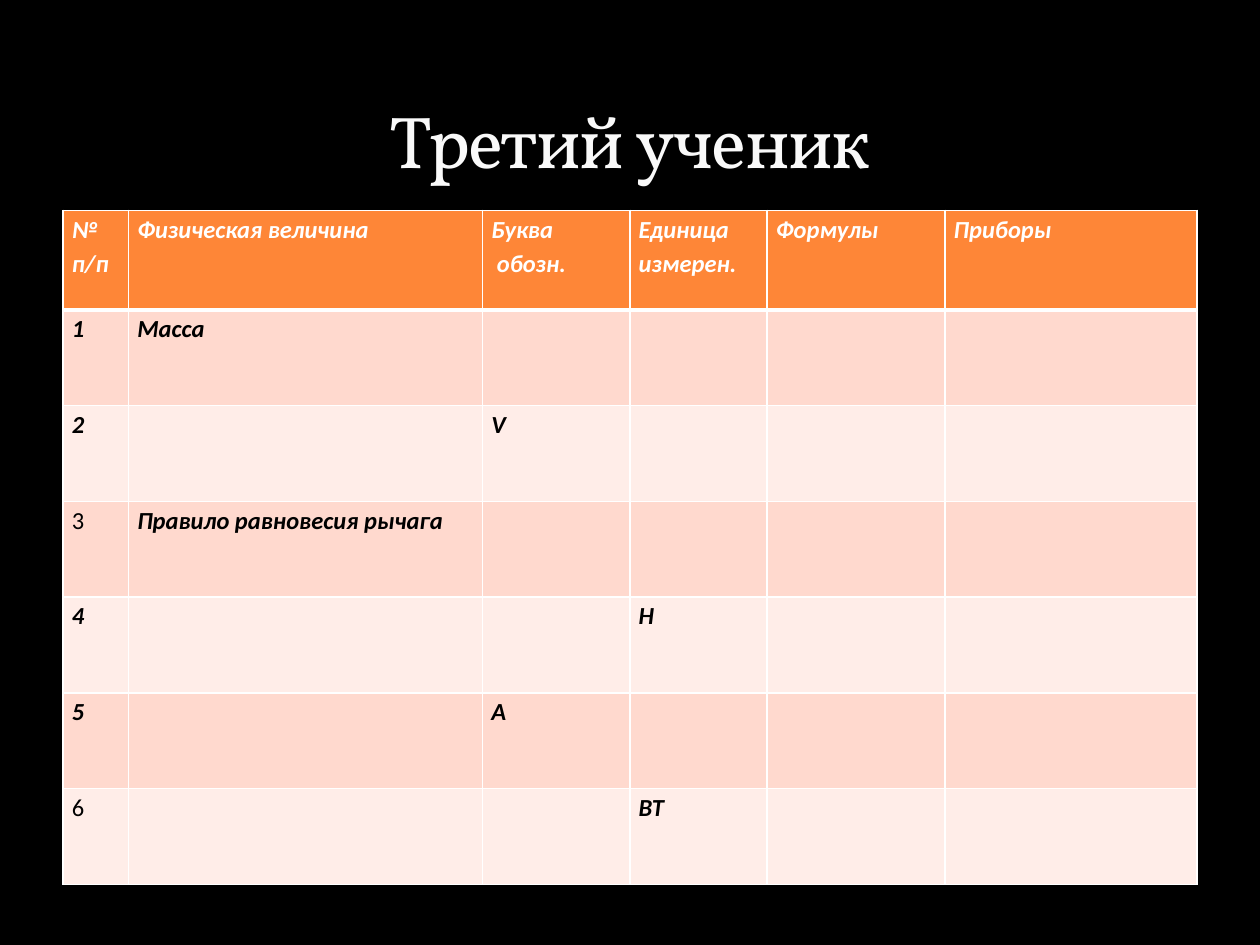
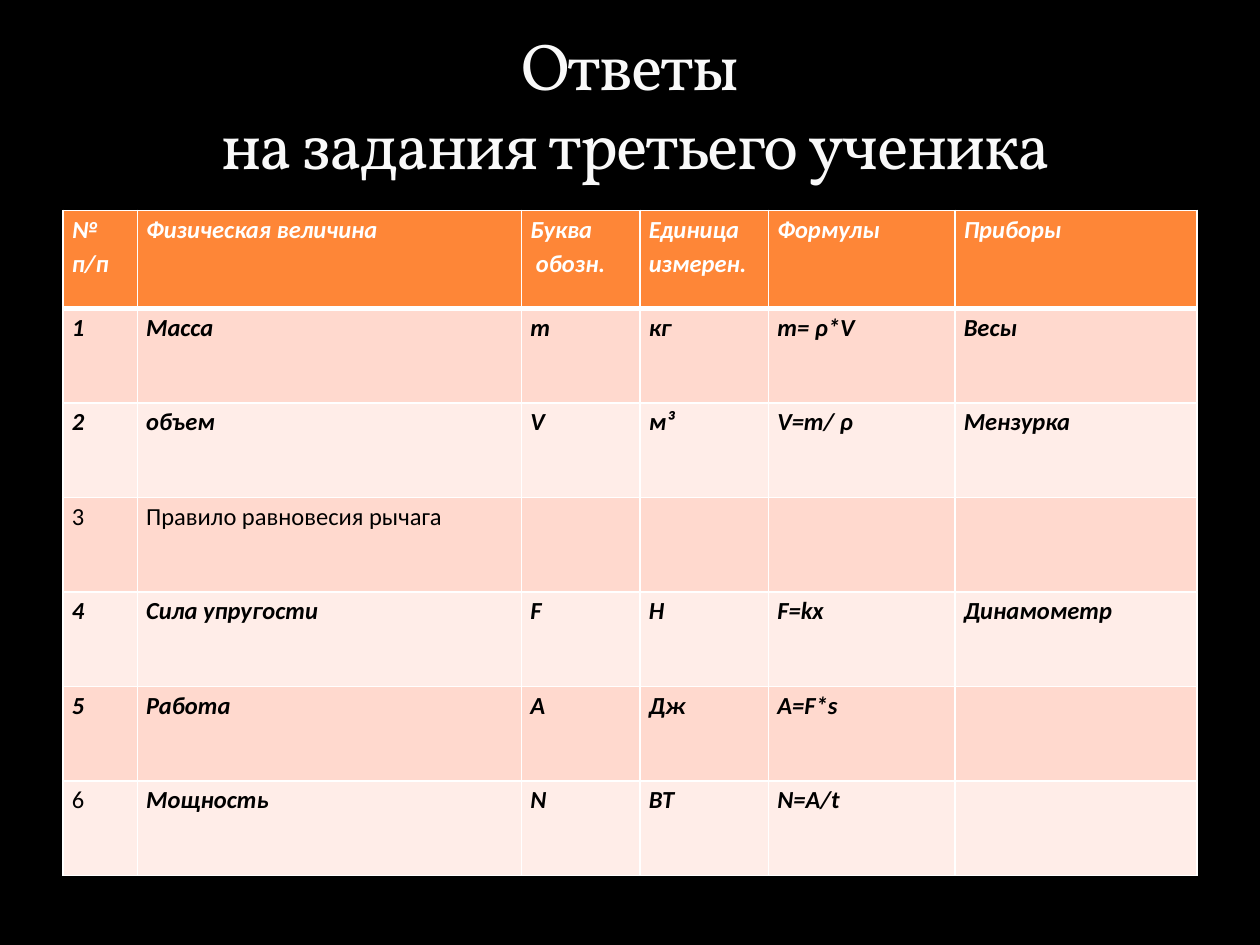
from dataclasses import dataclass

from lxml.etree import SubElement
from pptx import Presentation
from pptx.dml.color import RGBColor
from pptx.enum.text import MSO_ANCHOR, PP_ALIGN
from pptx.oxml.ns import qn
from pptx.util import Inches, Pt


@dataclass(frozen=True)
class Theme:
    background: str = "000000"
    title: str = "F9F9F9"
    header_text: str = "FFFFFF"
    body_text: str = "000000"
    header_fill: str = "FE8637"
    bands: tuple = ("FFD9CE", "FFEDE8")
    grid: str = "FFFFFF"
    grid_width: float = 1
    header_rule: float = 3
    title_font: str = "Vollkorn"
    table_font: str = "Calibri"
    table_size: float = 14
    line_spacing: float = 1.15


THEME = Theme()
TITLE_BOX = (0.5, 0.17, 9, 1.33)
TABLE_BOX = (0.5, 1.67, 9)
HEADINGS = ["№ п/п", "Физическая величина", "Буква\n обозн.",
            "Единица измерен.", "Формулы", "Приборы"]
LEVER_RULE = "Правило равновесия рычага"

TASKS = [
    ["1", "Масса", "", "", "", ""],
    ["2", "", "V", "", "", ""],
    ["3", LEVER_RULE, "", "", "", ""],
    ["4", "", "", "Н", "", ""],
    ["5", "", "A", "", "", ""],
    ["6", "", "", "ВТ", "", ""],
]
ANSWERS = [
    ["1", "Масса", "m", "кг", "m= ρ*V", "Весы"],
    ["2", "объем", "V", "м³", "V=m/ ρ", "Мензурка"],
    ["3", LEVER_RULE, "", "", "", ""],
    ["4", "Сила упругости", "F", "Н", "F=kx", "Динамометр"],
    ["5", "Работа", "A", "Дж", "A=F*s", ""],
    ["6", "Мощность", "N", "ВТ", "N=A/t", ""],
]


def color(value):
    return RGBColor.from_string(value)


def add_title(slide, box, title, size):
    frame = slide.shapes.add_textbox(*map(Inches, box)).text_frame
    frame.word_wrap = True
    frame.vertical_anchor = MSO_ANCHOR.BOTTOM
    heading = frame.paragraphs[0]
    heading.text = title
    heading.alignment = PP_ALIGN.CENTER
    for run in heading.runs:
        run.font.size = Pt(size)
        run.font.name = THEME.title_font
        run.font.color.rgb = color(THEME.title)
        run.font._element.set("spc", "-100")


def draw_borders(cell, top, bottom):
    """Rule all four sides; must run before the cell is filled."""
    properties = cell._tc.get_or_add_tcPr()
    widths = {"L": THEME.grid_width, "R": THEME.grid_width, "T": top, "B": bottom}
    for side, width in widths.items():
        line = SubElement(properties, qn(f"a:ln{side}"), w=str(Pt(width)))
        fill = SubElement(line, qn("a:solidFill"))
        SubElement(fill, qn("a:srgbClr"), val=THEME.grid)


def style_cell(cell, fill, text_color, emphasis):
    cell.margin_left = cell.margin_right = Inches(0.07)
    cell.margin_top = cell.margin_bottom = 0
    cell.fill.solid()
    cell.fill.fore_color.rgb = color(fill)
    for paragraph in cell.text_frame.paragraphs:
        paragraph.line_spacing = THEME.line_spacing
        for run in paragraph.runs:
            run.font.size = Pt(THEME.table_size)
            run.font.name = THEME.table_font
            run.font.color.rgb = color(text_color)
            run.font.bold = run.font.italic = emphasis


def add_quantity_table(slide, box, quantities, widths, header_height, row_height, plain):
    """Draw the quantities under the headings; texts in plain are not bold italic."""
    left, top, width = box
    rows = [HEADINGS, *quantities]
    height = header_height + row_height * len(quantities)
    table = slide.shapes.add_table(
        len(rows), len(HEADINGS), Inches(left), Inches(top), Inches(width), Inches(height)
    ).table
    for column, column_width in zip(table.columns, widths):
        column.width = Inches(column_width)

    for r, row in enumerate(rows):
        is_header = r == 0
        table.rows[r].height = Inches(header_height if is_header else row_height)
        fill = THEME.header_fill if is_header else THEME.bands[(r - 1) % 2]
        text_color = THEME.header_text if is_header else THEME.body_text
        for c, entry in enumerate(row):
            cell = table.cell(r, c)
            if entry:
                cell.text_frame.text = entry
            draw_borders(
                cell,
                top=THEME.header_rule if r == 1 else THEME.grid_width,
                bottom=THEME.header_rule if is_header else THEME.grid_width,
            )
            style_cell(cell, fill, text_color, entry not in plain)


def add_pupil_slide(deck, title, title_size, **table_options):
    slide = deck.slides.add_slide(deck.slide_layouts[6])
    slide.background.fill.solid()
    slide.background.fill.fore_color.rgb = color(THEME.background)
    add_quantity_table(slide, TABLE_BOX, **table_options)
    add_title(slide, TITLE_BOX, title, title_size)


def main():
    deck = Presentation()
    deck.slide_width, deck.slide_height = Inches(10), Inches(7.5)
    add_pupil_slide(
        deck, "Третий ученик", 42, quantities=TASKS,
        widths=[0.52, 2.81, 1.17, 1.09, 1.41, 2],
        header_height=0.79, row_height=0.76, plain={"3", "6"},
    )
    add_pupil_slide(
        deck, "Ответы\v на задания третьего ученика", 37.8, quantities=ANSWERS,
        widths=[0.59, 3.05, 0.94, 1.02, 1.48, 1.92],
        header_height=0.78, row_height=0.75, plain={"3", "6", LEVER_RULE},
    )
    deck.save("out.pptx")


if __name__ == "__main__":
    main()
